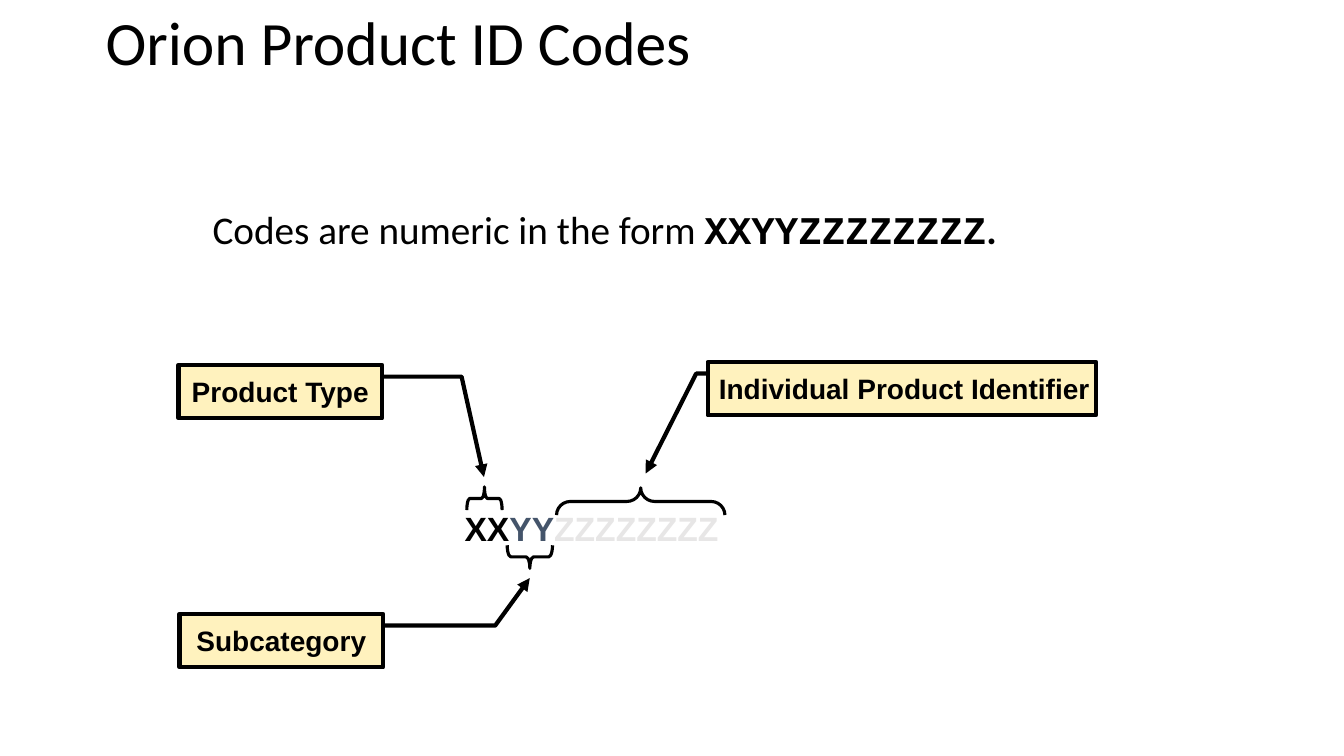
from dataclasses import dataclass

from pptx import Presentation
from pptx import util as u
from pptx.dml.color import RGBColor
from pptx.enum import shapes, text
from pptx.oxml import parse_xml
from pptx.oxml.ns import nsdecls


@dataclass(frozen=True)
class Theme:
    ink: str = "000000"
    slate: str = "44546A"
    pale: str = "E7E6E6"
    cream: str = "FFF2BE"
    head: str = "Calibri"
    label: str = "Arial"
    mono: str = "Courier New"
    title: int = 44
    body: int = 28
    code: int = 24
    tag: int = 20


T = Theme()


def inch(box):
    return [u.Inches(v) for v in box]


def style(run, font, size, color=T.ink, bold=False):
    run.font.name = font
    run.font.size = u.Pt(size)
    run.font.bold = bold
    run.font.color.rgb = RGBColor.from_string(color)


def pad(frame, left, top, right, bottom):
    frame.margin_left, frame.margin_top = u.Inches(left), u.Inches(top)
    frame.margin_right, frame.margin_bottom = u.Inches(right), u.Inches(bottom)


def add_text(slide, box, parts, size, wrap=True):
    """Add one line of text; parts holds (words, font, color, bold)."""
    frame = slide.shapes.add_textbox(*inch(box)).text_frame
    frame.word_wrap = wrap
    para = frame.paragraphs[0]
    for words, font, color, bold in parts:
        run = para.add_run()
        run.text = words
        style(run, font, size, color, bold)
    return frame


def outline(shape, width):
    shape.shadow.inherit = False
    shape.line.color.rgb = RGBColor.from_string(T.ink)
    shape.line.width = u.Pt(width)


def set_adj(shape, values):
    for i, value in enumerate(values):
        shape.adjustments[i] = value


def add_brace(slide, box, turn, curve):
    brace = slide.shapes.add_shape(shapes.MSO_SHAPE.RIGHT_BRACE, *inch(box))
    brace.rotation = turn
    set_adj(brace, (curve, 0.5))
    brace.fill.background()
    outline(brace, 2.25)


def add_label(slide, box, words, leader, right=0.1, wrap=True):
    """Add a boxed label; leader holds the y, x pairs of its arrow."""
    kind = shapes.MSO_SHAPE.LINE_CALLOUT_2
    label = slide.shapes.add_shape(kind, *inch(box))
    set_adj(label, leader)
    label.fill.solid()
    label.fill.fore_color.rgb = RGBColor.from_string(T.cream)
    outline(label, 3)
    label.line._get_or_add_ln().append(
        parse_xml(f'<a:tailEnd {nsdecls("a")} type="triangle"/>'))
    frame = label.text_frame
    frame.text = words
    frame.word_wrap = wrap
    frame.auto_size = text.MSO_AUTO_SIZE.SHAPE_TO_FIT_TEXT
    frame.vertical_anchor = text.MSO_ANCHOR.MIDDLE
    pad(frame, 0.1, 0.1, right, 0.1)
    para = frame.paragraphs[0]
    para.alignment = text.PP_ALIGN.CENTER
    style(para.runs[0], T.label, T.tag, bold=True)


def main():
    deck = Presentation()
    deck.slide_width, deck.slide_height = u.Inches(13.33), u.Inches(7.5)
    slide = deck.slides.add_slide(deck.slide_layouts[6])

    # Title and statement
    title = add_text(slide, (0.95, 0.01, 11.5, 0.88),
                     [("Orion Product ID Codes", T.head, T.ink, False)],
                     T.title)
    title.vertical_anchor = text.MSO_ANCHOR.MIDDLE
    body = add_text(slide, (2.01, 2.04, 8.58, 0.63),
                    [("Codes are numeric in the form ", T.head, T.ink, False),
                     ("XXYYZZZZZZZZ", T.mono, T.ink, True),
                     (".", T.head, T.ink, True)], T.body)
    body.paragraphs[0].space_before = u.Pt(10)
    for frame in (title, body):
        frame.paragraphs[0].line_spacing = 0.9

    # Code in three colours
    code = add_text(slide, (4.51, 4.94, 2.73, 0.6),
                    [("XX", T.label, T.ink, True),
                     ("YY", T.label, T.slate, True),
                     ("ZZZZZZZZ", T.label, T.pale, True)], T.code, wrap=False)
    code.auto_size = text.MSO_AUTO_SIZE.SHAPE_TO_FIT_TEXT
    pad(code, 0.1, 0.1, 0.1, 0.1)

    # Braces around the code parts
    add_brace(slide, (4.69, 4.77, 0.23, 0.35), 270, 0.125)
    add_brace(slide, (6.22, 4.14, 0.27, 1.67), 270, 0.51)
    add_brace(slide, (5.14, 5.3, 0.23, 0.45), 90, 0.16)

    # Labels with arrows
    add_label(slide, (7.02, 3.59, 3.85, 0.53), "Individual Product Identifier",
              (0.22, 0, 0.22, -0.03, 2.09, -0.16), right=0.05, wrap=False)
    add_label(slide, (1.77, 3.62, 2.02, 0.53), "Product Type",
              (0.22, 1, 0.22, 1.39, 2.1, 1.5))
    add_label(slide, (1.78, 6.09, 2.02, 0.53), "Subcategory",
              (0.22, 1, 0.22, 1.55, -0.67, 1.72))

    deck.save("out.pptx")


if __name__ == "__main__":
    main()
